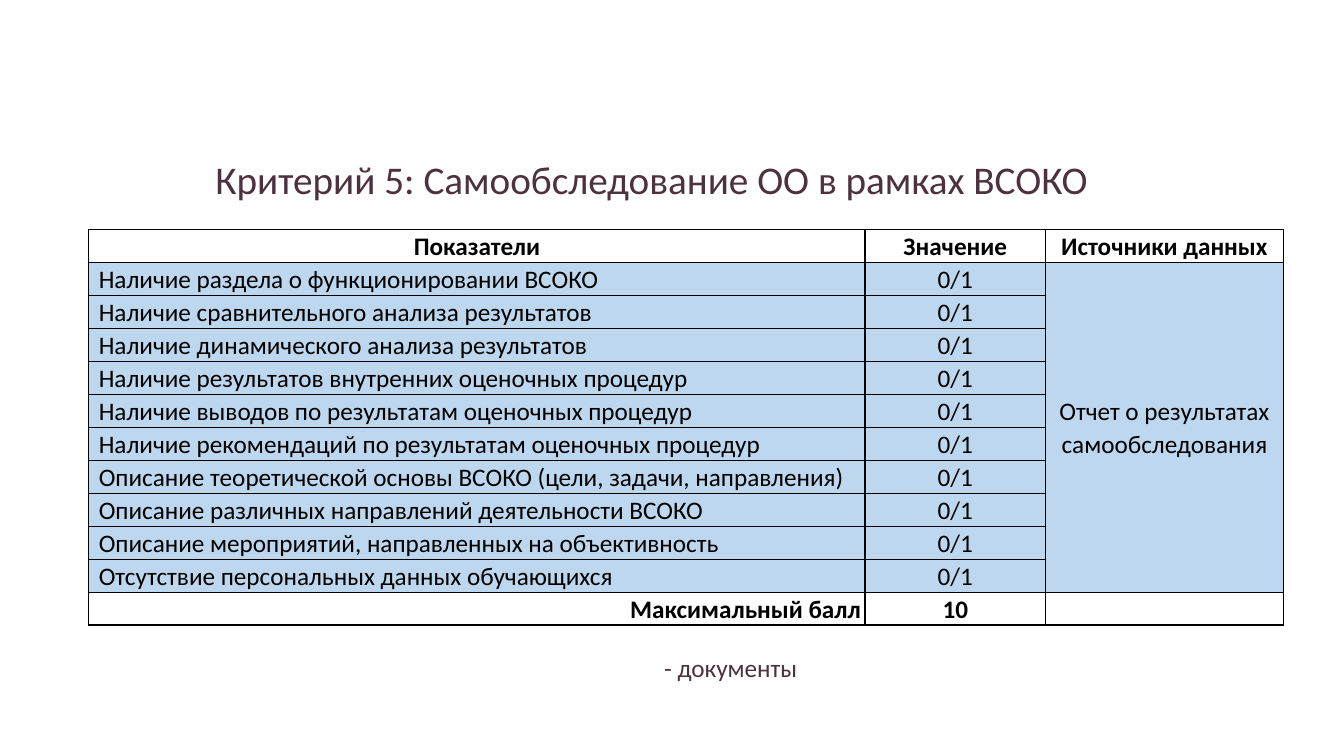
from lxml.etree import SubElement
from pptx import Presentation
from pptx.dml.color import RGBColor
from pptx.enum.text import MSO_ANCHOR, PP_ALIGN
from pptx.oxml.ns import qn
from pptx.util import Cm, Pt

TITLE = "Критерий 5: Самообследование ОО в рамках ВСОКО"
FOOTNOTE = "- документы"
HEADER = ["Показатели", "Значение", "Источники данных"]
INDICATORS = [
    "Наличие раздела о функционировании ВСОКО",
    "Наличие сравнительного анализа результатов",
    "Наличие динамического анализа результатов",
    "Наличие результатов внутренних оценочных процедур",
    "Наличие выводов по результатам оценочных процедур",
    "Наличие рекомендаций по результатам оценочных процедур",
    "Описание теоретической основы ВСОКО (цели, задачи, направления)",
    "Описание различных направлений деятельности ВСОКО",
    "Описание мероприятий, направленных на объективность",
    "Отсутствие персональных данных обучающихся",
]
SCORE = "0/1"
DATA_SOURCE = "Отчет о результатах самообследования"
TOTAL = ["Максимальный балл", "10", ""]

COLORS = {"heading": "4D313E", "text": "000000", "border": "000000",
          "indicator": "BDD7EE", "plain": "FFFFFF"}
FONT = "Calibri"
COLUMN_WIDTHS = [19.56, 4.55, 5.99]
ROW_HEIGHT = 0.83


def style_paragraph(paragraph, size, color, align, spacing, bold=False):
    paragraph.alignment = align
    paragraph.line_spacing = spacing
    for run in paragraph.runs:
        run.font.name = FONT
        run.font.size = Pt(size)
        run.font.bold = bold
        run.font.color.rgb = RGBColor.from_string(COLORS[color])


def add_caption(slide, text, left, top, width, height, size):
    frame = slide.shapes.add_textbox(Cm(left), Cm(top), Cm(width), Cm(height)).text_frame
    frame.word_wrap = True
    frame.text = text
    style_paragraph(frame.paragraphs[0], size, "heading", PP_ALIGN.CENTER, 0.9)


def add_borders(cell):
    """Draw the four sides; lines must precede the fill in the cell properties."""
    properties = cell._tc.get_or_add_tcPr()
    for position, side in enumerate(("a:lnL", "a:lnR", "a:lnT", "a:lnB")):
        line = SubElement(properties, qn(side), w=str(Pt(1)))
        fill = SubElement(line, qn("a:solidFill"))
        SubElement(fill, qn("a:srgbClr"), val=COLORS["border"])
        properties.insert(position, line)


def fill_cell(cell, text, fill, align=PP_ALIGN.CENTER, bold=False, left_margin=0.1):
    cell.text = text
    cell.vertical_anchor = MSO_ANCHOR.MIDDLE
    cell.margin_left, cell.margin_right = Cm(left_margin), Cm(0.1)
    cell.margin_top = cell.margin_bottom = 0
    cell.fill.solid()
    cell.fill.fore_color.rgb = RGBColor.from_string(COLORS[fill])
    add_borders(cell)
    style_paragraph(cell.text_frame.paragraphs[0], 18, "text", align, 1.07, bold)


def add_criteria_table(slide):
    row_count = len(INDICATORS) + 2
    table = slide.shapes.add_table(
        row_count, len(HEADER), Cm(2.24), Cm(5.79),
        Cm(sum(COLUMN_WIDTHS)), Cm(ROW_HEIGHT * row_count)).table
    for column, width in zip(table.columns, COLUMN_WIDTHS):
        column.width = Cm(width)
    for row in table.rows:
        row.height = Cm(ROW_HEIGHT)

    last = row_count - 1
    for column, (heading, total) in enumerate(zip(HEADER, TOTAL)):
        total_align = PP_ALIGN.CENTER if column else PP_ALIGN.RIGHT
        fill_cell(table.cell(0, column), heading, "plain", bold=True)
        fill_cell(table.cell(last, column), total, "plain", total_align, bold=True)
    for row, indicator in enumerate(INDICATORS, start=1):
        fill_cell(table.cell(row, 0), indicator, "indicator", PP_ALIGN.LEFT, left_margin=0.25)
        fill_cell(table.cell(row, 1), SCORE, "indicator")
        fill_cell(table.cell(row, 2), DATA_SOURCE if row == 1 else "", "indicator")
    table.cell(1, 2).merge(table.cell(last - 1, 2))


def main():
    presentation = Presentation()
    presentation.slide_width, presentation.slide_height = Cm(33.87), Cm(19.05)
    slide = presentation.slides.add_slide(presentation.slide_layouts[6])
    add_caption(slide, TITLE, 0.5, 3.92, 31.83, 1.45, 28)
    add_criteria_table(slide)
    add_caption(slide, FOOTNOTE, 13.98, 16.39, 8.87, 1.14, 18)
    presentation.save("out.pptx")


if __name__ == "__main__":
    main()
